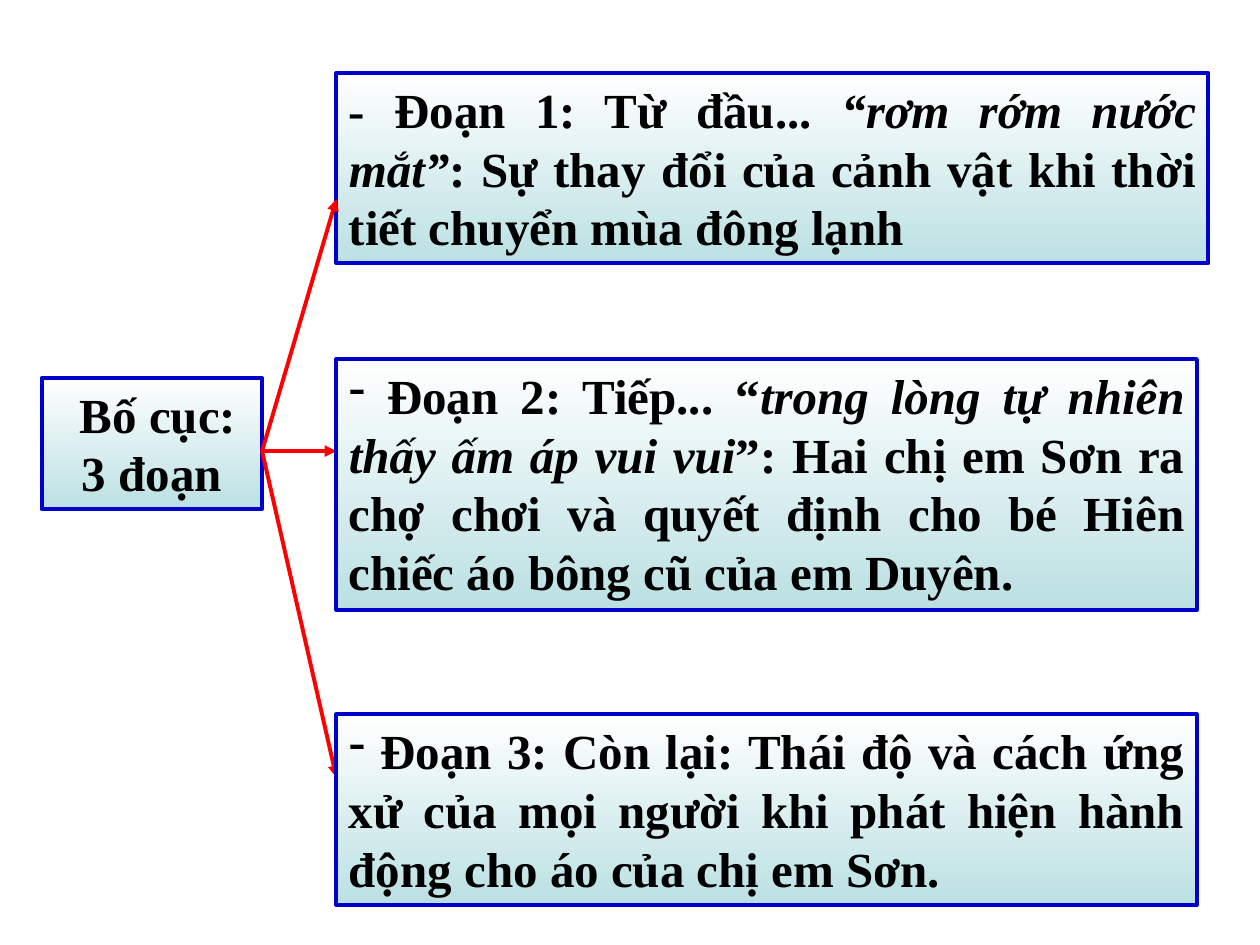
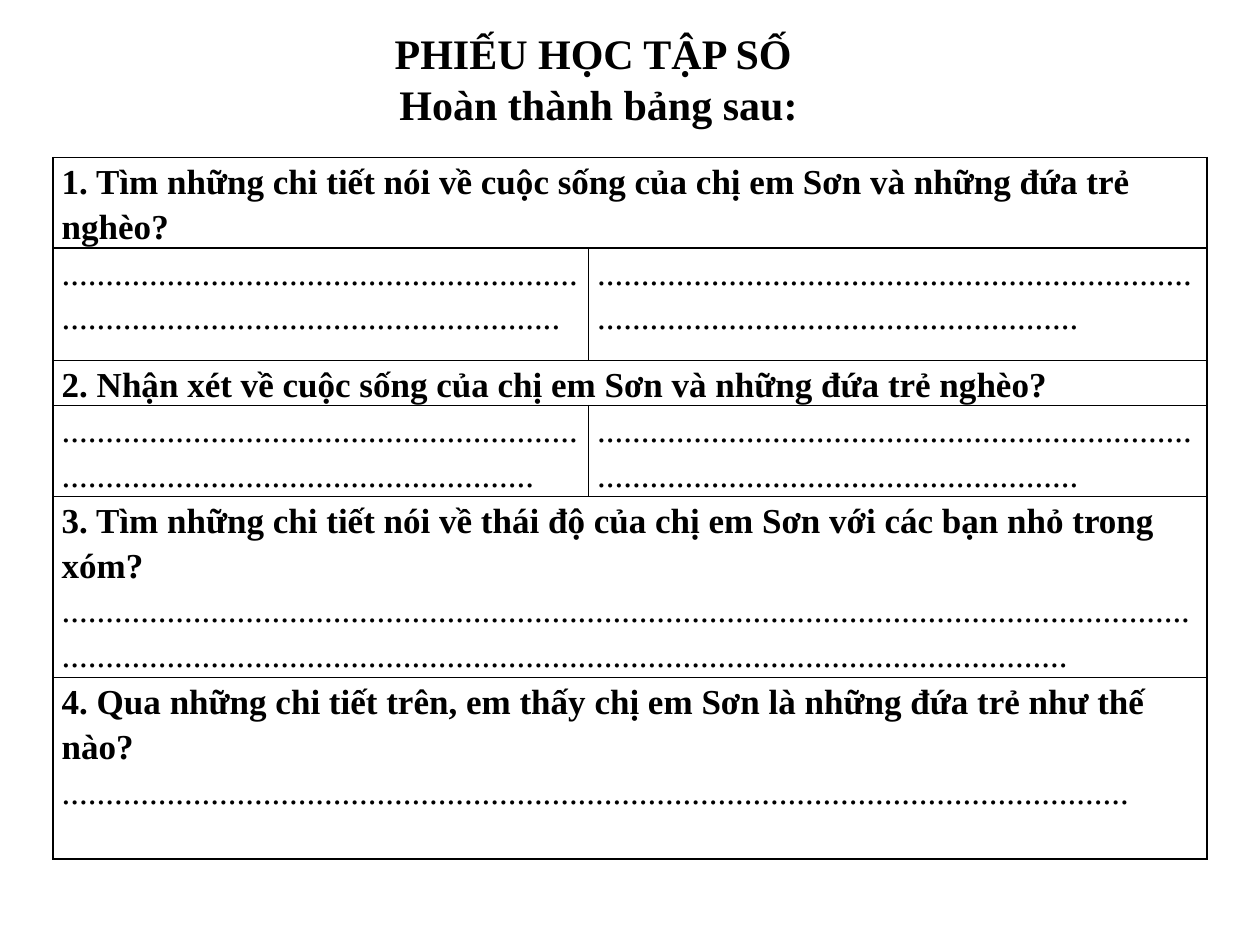
from dataclasses import dataclass

from lxml import etree
from pptx import Presentation
from pptx.dml.color import RGBColor
from pptx.enum.shapes import MSO_CONNECTOR, MSO_SHAPE
from pptx.enum.text import MSO_ANCHOR, MSO_AUTO_SIZE, PP_ALIGN
from pptx.oxml.ns import qn
from pptx.util import Inches, Pt

RECT = MSO_SHAPE.RECTANGLE
STRAIGHT = MSO_CONNECTOR.STRAIGHT
TOP = MSO_ANCHOR.TOP
GROW = MSO_AUTO_SIZE.SHAPE_TO_FIT_TEXT
LEFT, CENTER, JUSTIFY = PP_ALIGN.LEFT, PP_ALIGN.CENTER, PP_ALIGN.JUSTIFY


@dataclass(frozen=True)
class Theme:
    """Colours, font and sizes shared by the slides."""
    font: str = "Times New Roman"
    ink: str = "000000"
    edge: str = "0000CC"
    arrow: str = "FF0000"
    light: str = "FFFFFF"
    tint: str = "BBE0E3"
    line: float = 2.25
    grid: float = 1
    body: int = 28
    title: int = 24
    cell: int = 20


THEME = Theme()

HUB = (0.33, 3, 1.75, 1.04)
FORK = (2.08, 3.58)
PARTS = [
    ((2.67, 0.58, 6.92, 1.51), 1.58, False,
     ["- Đoạn 1: Từ đầu... ", "“rơm rớm nước mắt”",
      ": Sự thay đổi của cảnh vật khi thời tiết chuyển mùa đông lạnh"]),
    ((2.67, 2.85, 6.83, 1.99), 3.58, True,
     [" Đoạn 2: Tiếp... “", "trong lòng tự nhiên thấy ấm áp vui vui",
      "”: Hai chị em Sơn ra chợ chơi và quyết định cho bé Hiên "
      "chiếc áo bông cũ của em Duyên."]),
    ((2.67, 5.67, 6.83, 1.51), 6.17, True,
     [" Đoạn 3: Còn lại: Thái độ và cách ứng xử của mọi người "
      "khi phát hiện hành động cho áo của chị em Sơn."]),
]

TITLE = ["PHIẾU HỌC TẬP SỐ ", "Hoàn thành bảng sau:"]
COLS = [4.25, 4.91]
ROWS = [
    (0.72, [["1. Tìm những chi tiết nói về cuộc sống của chị em Sơn "
             "và những đứa trẻ nghèo?"]]),
    (0.89, [[116], [123]]),
    (0.36, [["2. Nhận xét về cuộc sống của chị em Sơn và những đứa trẻ nghèo?"]]),
    (0.72, [[113], [123]]),
    (1.44, [["3. Tìm những chi tiết nói về thái độ của chị em Sơn "
             "với các bạn nhỏ trong xóm?", 244]]),
    (1.44, [["4. Qua những chi tiết trên, em thấy chị em Sơn "
             "là những đứa trẻ như thế nào?", 122]]),
]


def color(code):
    """Turn a hex code into a colour."""
    return RGBColor.from_string(code)


def style(para, size, align, bold=True):
    """Format a paragraph and all its runs."""
    para.alignment = align
    for run in para.runs:
        font = run.font
        font.name, font.size, font.bold = THEME.font, Pt(size), bold
        font.color.rgb = color(THEME.ink)


def draw_box(slide, box, parts, align, bullet=False):
    """Draw a gradient box whose every second run is italic."""
    shape = slide.shapes.add_shape(RECT, *map(Inches, box))
    shape.shadow.inherit = False
    shape.fill.gradient()
    shape.fill.gradient_angle = 270
    for stop, code in zip(shape.fill.gradient_stops, (THEME.light, THEME.tint)):
        stop.color.rgb = color(code)
    shape.line.color.rgb = color(THEME.edge)
    shape.line.width = Pt(THEME.line)
    frame = shape.text_frame
    frame.word_wrap, frame.auto_size = True, GROW
    frame.vertical_anchor = TOP
    para = frame.paragraphs[0]
    for i, part in enumerate(parts):
        run = para.add_run()
        run.text = part
        run.font.italic = i % 2 == 1
    style(para, THEME.body, align)
    if bullet:
        mark = etree.SubElement(para._p.get_or_add_pPr(), qn("a:buChar"))
        mark.set("char", "-")


def draw_arrow(slide, start, end):
    """Draw a red arrow between two points."""
    arrow = slide.shapes.add_connector(STRAIGHT, *map(Inches, start + end))
    arrow.line.color.rgb = color(THEME.arrow)
    arrow.line.width = Pt(THEME.line)
    tail = etree.SubElement(arrow.line._get_or_add_ln(), qn("a:tailEnd"))
    tail.set("type", "triangle")
    etree.SubElement(arrow._element.spPr, qn("a:effectLst"))


def outline_slide(slide):
    """Build the outline that forks into three parts."""
    draw_box(slide, HUB, [" Bố cục: 3 đoạn"], CENTER)
    for i, (box, level, bullet, parts) in enumerate(PARTS):
        draw_box(slide, box, parts, JUSTIFY, bullet)
        if i == 0:
            for target, height, *_ in PARTS:
                draw_arrow(slide, FORK, (target[0], height))


def draw_title(slide, box):
    """Write the centred two-line heading."""
    frame = slide.shapes.add_textbox(*map(Inches, box)).text_frame
    frame.word_wrap, frame.auto_size = True, GROW
    frame.text = "\n".join(TITLE)
    for para in frame.paragraphs:
        style(para, THEME.title, CENTER)


def frame_cell(cell):
    """Give a cell thin margins, a border and no fill."""
    cell.margin_left = cell.margin_right = Inches(0.07)
    cell.margin_top = cell.margin_bottom = 0
    props = cell._tc.get_or_add_tcPr()
    for side in ("lnL", "lnR", "lnT", "lnB"):
        line = etree.SubElement(props, qn(f"a:{side}"), w=str(Pt(THEME.grid)))
        fill = etree.SubElement(line, qn("a:solidFill"))
        etree.SubElement(fill, qn("a:srgbClr"), val=THEME.ink)
    cell.fill.background()


def fill_cell(cell, items):
    """Write questions in bold and numbers as dotted answer lines."""
    cell.text = "\n".join(
        item if isinstance(item, str) else "." * item for item in items)
    for para, item in zip(cell.text_frame.paragraphs, items):
        style(para, THEME.cell, LEFT, isinstance(item, str))
        para.line_spacing = 1.15


def draw_table(slide, left, top):
    """Draw the worksheet grid of questions and answers."""
    size = (sum(COLS), sum(height for height, _ in ROWS))
    table = slide.shapes.add_table(
        len(ROWS), len(COLS), *map(Inches, (left, top) + size)).table
    table.first_row = table.horz_banding = False
    for col, width in zip(table.columns, COLS):
        col.width = Inches(width)
    for cell in table.iter_cells():
        frame_cell(cell)
    for i, (height, cells) in enumerate(ROWS):
        table.rows[i].height = Inches(height)
        if len(cells) == 1:
            table.cell(i, 0).merge(table.cell(i, 1))
        for j, items in enumerate(cells):
            fill_cell(table.cell(i, j), items)


def sheet_slide(slide):
    """Build the worksheet slide."""
    draw_table(slide, 0.42, 1.25)
    draw_title(slide, (1, 0.17, 7.5, 0.91))


def main():
    """Build both slides and save them."""
    deck = Presentation()
    deck.slide_width, deck.slide_height = Inches(10), Inches(7.5)
    for build in (outline_slide, sheet_slide):
        build(deck.slides.add_slide(deck.slide_layouts[6]))
    deck.save("out.pptx")


if __name__ == "__main__":
    main()
